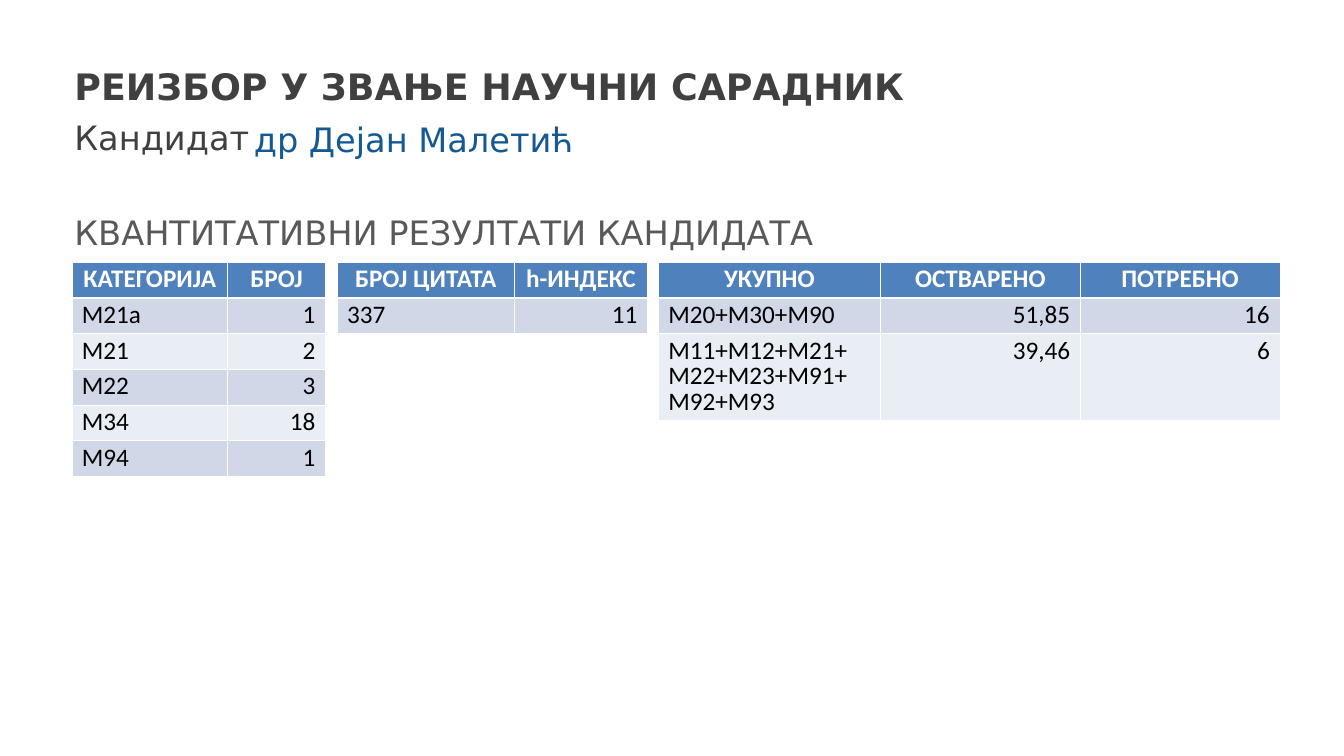
from dataclasses import dataclass

from lxml import etree
from pptx import Presentation
from pptx.dml.color import RGBColor
from pptx.enum import text
from pptx.oxml import ns
from pptx.util import Pt


@dataclass(frozen=True)
class Theme:
    heading_font: str = "DejaVu Sans"
    table_font: str = "Calibri"
    title_size: float = 26
    heading_size: float = 24
    table_size: float = 18
    dark: str = "404040"
    grey: str = "595959"
    name_blue: str = "145991"
    header: str = "4F81BD"
    bands: tuple = ("D0D8E8", "E9EDF4")
    white: str = "FFFFFF"
    black: str = "000000"


theme = Theme()
ALIGN, ANCHOR = text.PP_ALIGN, text.MSO_ANCHOR


def write(tf, words, *, size, color, font, bold=False, align=ALIGN.LEFT,
          spacing=None, after=None):
    """Fill the first paragraph of a text frame, with a line break at each newline."""
    p = tf.paragraphs[0]
    p.alignment = align
    p.line_spacing = spacing
    p.space_after = after
    for i, line in enumerate(words.split("\n")):
        if i:
            p.add_line_break()
        r = p.add_run()
        r.text = line
        r.font.size, r.font.name, r.font.bold = Pt(size), font, bold
        r.font.color.rgb = RGBColor.from_string(color)


def add_borders(cell, row):
    """Draw thin white borders, thicker between the header and the body."""
    thin, thick = Pt(0.45), Pt(1.47)
    widths = {"L": thin, "R": thin, "T": thick if row == 1 else thin,
              "B": thick if row == 0 else thin}
    tc_pr = cell._tc.get_or_add_tcPr()
    for side, width in widths.items():
        ln = etree.SubElement(tc_pr, ns.qn(f"a:ln{side}"), w=str(int(width)))
        fill = etree.SubElement(ln, ns.qn("a:solidFill"))
        etree.SubElement(fill, ns.qn("a:srgbClr"), val=theme.white)


prs = Presentation()
prs.slide_width, prs.slide_height = Pt(960), Pt(540)
s = prs.slides.add_slide(prs.slide_layouts[6])

# Headings: text, box, anchor, format
headings = [
    ("РЕИЗБОР У ЗВАЊЕ НАУЧНИ САРАДНИК", (46.1, 38.9, 868.3, 41.8), ANCHOR.BOTTOM,
     dict(size=theme.title_size, color=theme.dark, bold=True)),
    ("Кандидат", (46.1, 79.9, 868.3, 36), ANCHOR.TOP,
     dict(size=theme.heading_size, color=theme.dark)),
    ("др Дејан Малетић", (174.2, 80.6, 486, 34.6), ANCHOR.MIDDLE,
     dict(size=theme.heading_size, color=theme.name_blue, spacing=1.1, after=Pt(6))),
    ("КВАНТИТАТИВНИ РЕЗУЛТАТИ КАНДИДАТА", (46.1, 141.8, 868.3, 41.8), ANCHOR.BOTTOM,
     dict(size=theme.heading_size, color=theme.grey)),
]
for words, box, anchor, style in headings:
    tf = s.shapes.add_textbox(*map(Pt, box)).text_frame
    tf.word_wrap = True
    tf.vertical_anchor = anchor
    write(tf, words, font=theme.heading_font, **style)

# Tables: left edge, column widths, anchor, rows
TABLE_TOP, ROW_HEIGHT, EXTRA_LINE = 187.4, 25.5, 18
tables = [
    (51.3, (111.4, 69.8), ANCHOR.MIDDLE,
     [("КАТЕГОРИЈА", "БРОЈ"), ("М21а", "1"), ("М21", "2"),
      ("М22", "3"), ("М34", "18"), ("М94", "1")]),
    (240.8, (126.7, 95), ANCHOR.MIDDLE,
     [("БРОЈ ЦИТАТА", "h-ИНДЕКС"), ("337", "11")]),
    (470.2, (158.8, 142.6, 142.6), ANCHOR.TOP,
     [("УКУПНО", "ОСТВАРЕНО", "ПОТРЕБНО"), ("М20+М30+М90", "51,85", "16"),
      ("М11+М12+М21+\nМ22+М23+М91+\nМ92+М93", "39,46", "6")]),
]
for left, widths, anchor, rows in tables:
    heights = [ROW_HEIGHT + EXTRA_LINE * row[0].count("\n") for row in rows]
    table = s.shapes.add_table(len(rows), len(widths), Pt(left), Pt(TABLE_TOP),
                               Pt(sum(widths)), Pt(sum(heights))).table
    for column, width in zip(table.columns, widths):
        column.width = Pt(width)
    for i, row in enumerate(rows):
        table.rows[i].height = Pt(heights[i])
        is_header = i == 0
        band = theme.header if is_header else theme.bands[(i - 1) % 2]
        for j, words in enumerate(row):
            cell = table.cell(i, j)
            cell.vertical_anchor = anchor
            add_borders(cell, i)
            cell.fill.solid()
            cell.fill.fore_color.rgb = RGBColor.from_string(band)
            body_align = ALIGN.RIGHT if j else ALIGN.LEFT
            write(cell.text_frame, words, size=theme.table_size, font=theme.table_font,
                  color=theme.white if is_header else theme.black, bold=is_header,
                  align=ALIGN.CENTER if is_header else body_align, spacing=0.83)

prs.save("out.pptx")
